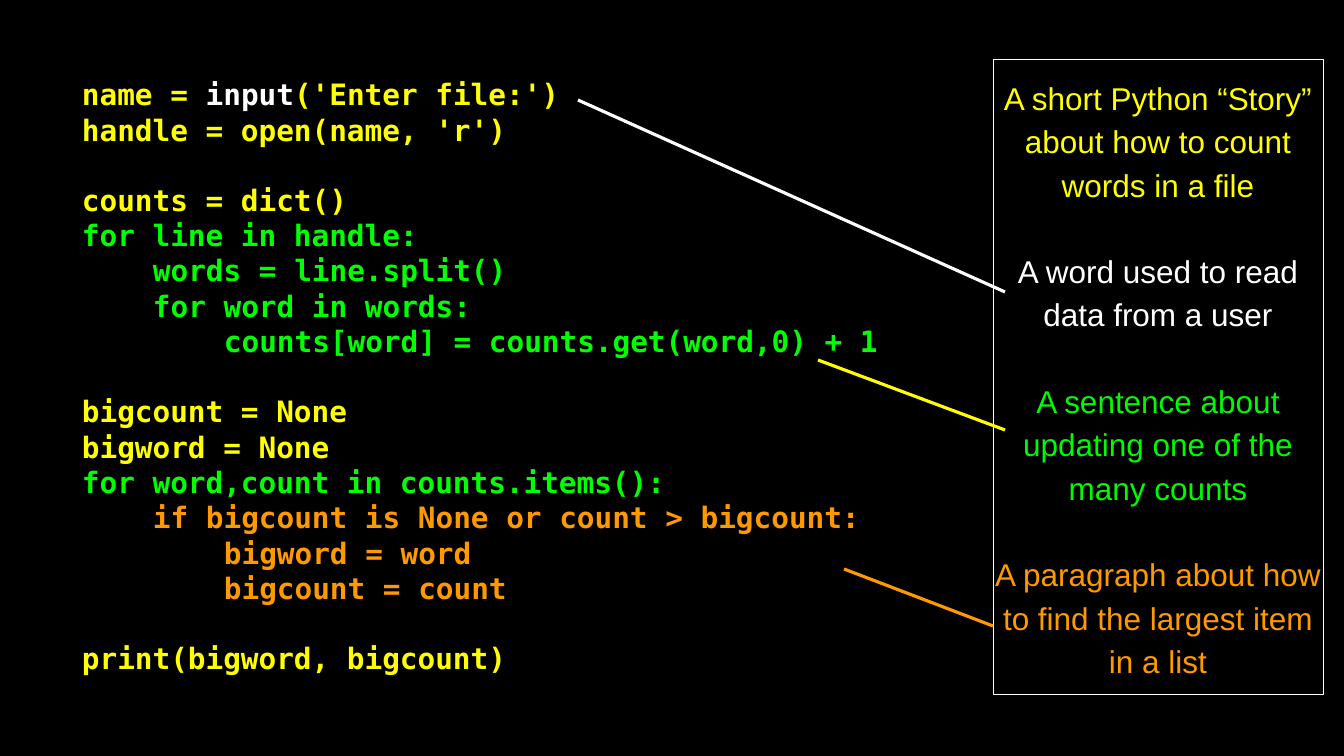
from dataclasses import dataclass
from pptx import Presentation
from pptx.dml.color import RGBColor
from pptx.enum.shapes import MSO_CONNECTOR, MSO_SHAPE
from pptx.enum.text import MSO_ANCHOR, PP_ALIGN
from pptx.oxml.ns import qn
from pptx.util import Pt
from lxml.etree import SubElement


@dataclass(frozen=True)
class Theme:
    black: RGBColor = RGBColor(0x00, 0x00, 0x00)
    white: RGBColor = RGBColor(0xFF, 0xFF, 0xFF)
    yellow: RGBColor = RGBColor(0xFF, 0xFF, 0x00)
    green: RGBColor = RGBColor(0x00, 0xFF, 0x00)
    soft_green: RGBColor = RGBColor(0x00, 0xFA, 0x00)
    orange: RGBColor = RGBColor(0xFF, 0x99, 0x00)
    code_font: str = "DejaVu Sans Mono"
    code_size: int = 28
    story_font: str = "Arial"
    story_size: int = 30


theme = Theme()
PX = 12096
INDENT = 71 * PX
CODE_GAP = 35 * PX
STORY_GAP = 43 * PX


def prepare_frame(shape):
    frame = shape.text_frame
    frame.word_wrap = True
    frame.vertical_anchor = MSO_ANCHOR.MIDDLE
    frame.margin_left = frame.margin_right = frame.margin_top = frame.margin_bottom = 0
    return frame


def add_span(paragraph, text, color, font, size, bold=False):
    span = paragraph.add_run()
    span.text = text
    span.font.name = font
    span.font.size = Pt(size)
    span.font.bold = bold
    span.font.color.rgb = color


deck = Presentation()
deck.slide_width, deck.slide_height = 1344 * PX, 756 * PX
page = deck.slides.add_slide(deck.slide_layouts[6])
page.background.fill.solid()
page.background.fill.fore_color.rgb = theme.black

code_blocks = [
    [
        (0, [("name = ", theme.yellow), ("input", theme.white), ("('Enter file:')", theme.yellow)]),
        (0, [("handle = open(name, 'r')", theme.yellow)]),
    ],
    [
        (0, [("counts = dict()", theme.yellow)]),
        (0, [("for line in handle:", theme.green)]),
        (1, [("words = line.split()", theme.green)]),
        (1, [("for word in words:", theme.green)]),
        (2, [("counts[word] = counts.get(word,0) + 1", theme.green)]),
    ],
    [
        (0, [("bigcount = None", theme.yellow)]),
        (0, [("bigword = None", theme.yellow)]),
        (0, [("for word,count in counts.items():", theme.green)]),
        (1, [("if bigcount is None or count > bigcount:", theme.orange)]),
        (2, [("bigword = word", theme.orange)]),
        (2, [("bigcount = count", theme.orange)]),
    ],
    [
        (0, [("print(bigword, bigcount)", theme.yellow)]),
    ],
]
code_box = page.shapes.add_textbox(82 * PX, 64 * PX, 829 * PX, 624 * PX)
code_frame = prepare_frame(code_box)
para = code_frame.paragraphs[0]
for block_number, block in enumerate(code_blocks):
    for line_number, (depth, spans) in enumerate(block):
        if block_number or line_number:
            para = code_frame.add_paragraph()
        if block_number and line_number == 0:
            para.space_before = CODE_GAP
        properties = para._p.get_or_add_pPr()
        properties.set("marL", str(depth * INDENT))
        properties.set("indent", "0")
        for text, color in spans:
            add_span(para, text, color, theme.code_font, theme.code_size, True)

stories = [
    ("A short Python “Story” about how to count words in a file", theme.yellow),
    ("A word used to read data from a user", theme.white),
    ("A sentence about updating one of the many counts", theme.soft_green),
    ("A paragraph about how to find the largest item in a list", theme.orange),
]
story_box = page.shapes.add_shape(MSO_SHAPE.RECTANGLE, 993 * PX, 59 * PX, 330 * PX, 635 * PX)
story_box.shadow.inherit = False
story_box.fill.background()
story_box.line.color.rgb = theme.white
story_box.line.width = Pt(0.75)
story_frame = prepare_frame(story_box)
for number, (text, color) in enumerate(stories):
    para = story_frame.add_paragraph() if number else story_frame.paragraphs[0]
    para.alignment = PP_ALIGN.CENTER
    para.line_spacing = 1.15
    if number:
        para.space_before = STORY_GAP
    add_span(para, text, color, theme.story_font, theme.story_size)

pointers = [
    (578, 100, 1005, 292, theme.white),
    (818, 360, 1005, 430, theme.yellow),
    (844, 569, 993, 626, theme.orange),
]
for left, top, right, bottom, color in pointers:
    pointer = page.shapes.add_connector(
        MSO_CONNECTOR.STRAIGHT, left * PX, top * PX, right * PX, bottom * PX
    )
    pointer.line.color.rgb = color
    pointer.line.width = Pt(3)
    SubElement(pointer._element.spPr, qn("a:effectLst"))

deck.save("out.pptx")
